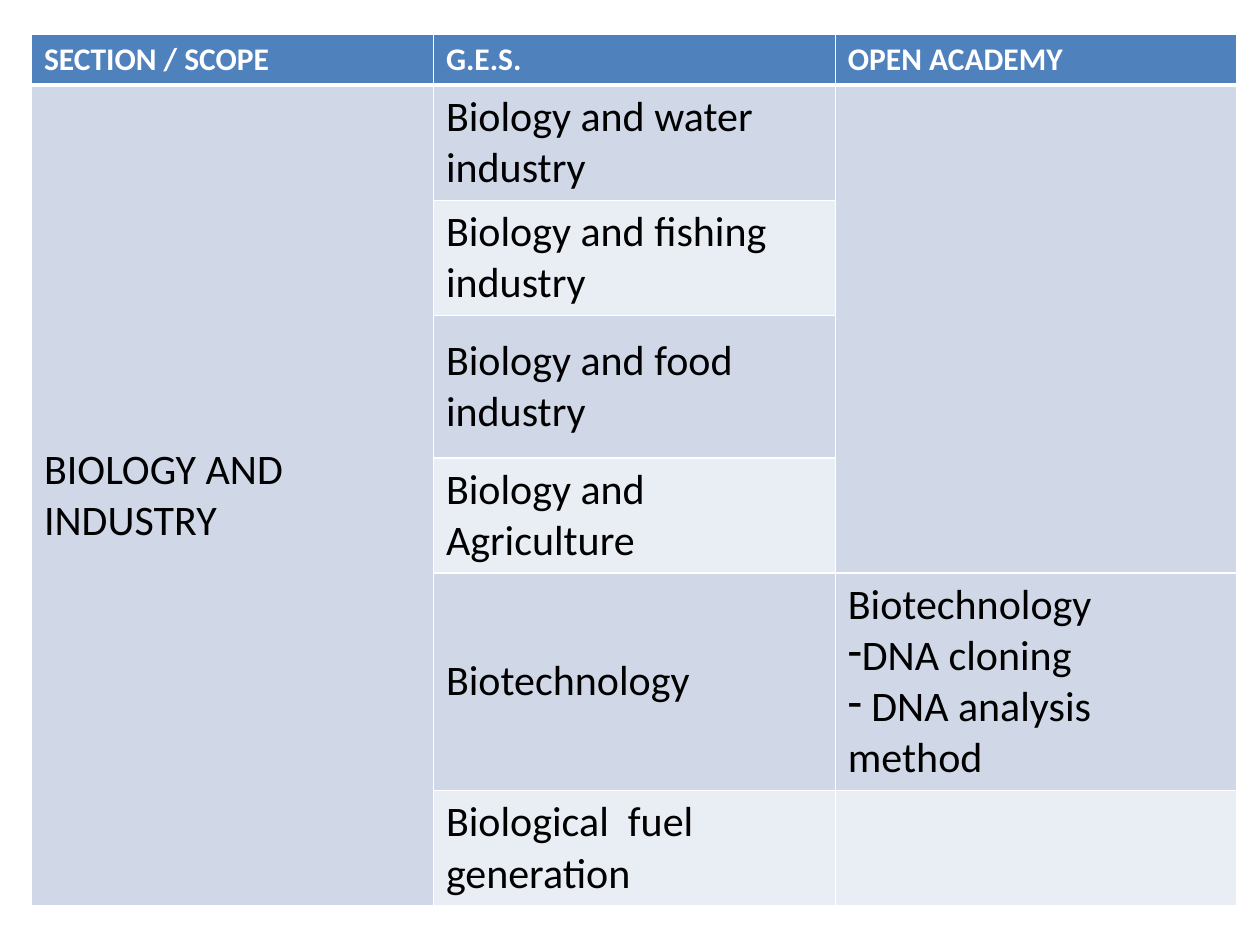
from dataclasses import dataclass

from lxml import etree
from pptx import Presentation
from pptx.dml.color import RGBColor
from pptx.enum.text import MSO_ANCHOR
from pptx.oxml.ns import qn
from pptx.util import Inches, Pt

TOP, MIDDLE = MSO_ANCHOR.TOP, MSO_ANCHOR.MIDDLE
WHITE = RGBColor(0xFF, 0xFF, 0xFF)
BLACK = RGBColor(0x00, 0x00, 0x00)
HEADER = RGBColor(0x4F, 0x81, 0xBD)
BAND_DARK = RGBColor(0xD0, 0xD8, 0xE8)
BAND_LIGHT = RGBColor(0xE9, 0xED, 0xF4)

WIDTH, HEIGHT = 10, 7.5
LEFT, TABLE_TOP = 0.25, 0.27
COL_WIDTH = 3.19
ROW_HEIGHTS = [0.38, 0.91, 0.91, 1.13, 0.91, 1.72, 0.91]
HEADER_FONT = {"name": "Calibri", "size": Pt(18), "bold": True}
BODY_FONT = {"name": "Calibri", "size": Pt(24), "bold": False}


@dataclass
class Entry:
    row: int
    col: int
    lines: tuple[str, ...] = ()
    rows: int = 1
    bullets_from: int = 99


HEADINGS = ("SECTION / SCOPE", "G.E.S.", "OPEN ACADEMY")
TOPICS = (
    "Biology and water industry",
    "Biology and fishing  industry",
    "Biology and food industry",
    "Biology and Agriculture",
    "Biotechnology",
    "Biological  fuel generation",
)
ENTRIES = [
    *(Entry(0, col, (text,)) for col, text in enumerate(HEADINGS)),
    Entry(1, 0, ("BIOLOGY AND INDUSTRY",), rows=6),
    *(Entry(row, 1, (text,)) for row, text in enumerate(TOPICS, 1)),
    Entry(1, 2, rows=4),
    Entry(5, 2, ("Biotechnology", "DNA cloning", " DNA analysis method"), bullets_from=1),
]


def add_border(cell, side: str, width: float) -> None:
    ln = etree.SubElement(cell._tc.get_or_add_tcPr(), qn(f"a:ln{side}"), w=str(Pt(width)))
    fill = etree.SubElement(ln, qn("a:solidFill"))
    etree.SubElement(fill, qn("a:srgbClr"), val=str(WHITE))


def style_cell(cell, row: int) -> None:
    widths = {"L": 1, "R": 1, "T": 3 if row == 1 else 1, "B": 3 if row == 0 else 1}
    for side, width in widths.items():
        add_border(cell, side, width)
    cell.fill.solid()
    band = BAND_DARK if row % 2 else BAND_LIGHT
    cell.fill.fore_color.rgb = HEADER if row == 0 else band
    cell.vertical_anchor = TOP if row == 0 else MIDDLE


def add_dash(p) -> None:
    pPr = p._p.get_or_add_pPr()
    pPr.set("marL", "0")
    pPr.set("indent", "0")
    etree.SubElement(pPr, qn("a:buFontTx"))
    etree.SubElement(pPr, qn("a:buChar"), char="-")


def fill_entry(table, entry: Entry) -> None:
    cell = table.cell(entry.row, entry.col)
    if entry.rows > 1:
        cell.merge(table.cell(entry.row + entry.rows - 1, entry.col))
    tf = cell.text_frame
    for i, line in enumerate(entry.lines):
        p = tf.add_paragraph() if i else tf.paragraphs[0]
        if i >= entry.bullets_from:
            add_dash(p)
        r = p.add_run()
        r.text = line
        for name, value in (BODY_FONT if entry.row else HEADER_FONT).items():
            setattr(r.font, name, value)
        r.font.color.rgb = BLACK if entry.row else WHITE


def main() -> None:
    prs = Presentation()
    prs.slide_width, prs.slide_height = Inches(WIDTH), Inches(HEIGHT)
    s = prs.slides.add_slide(prs.slide_layouts[6])
    size = Inches(COL_WIDTH * len(HEADINGS)), Inches(sum(ROW_HEIGHTS))
    table = s.shapes.add_table(
        len(ROW_HEIGHTS), len(HEADINGS), Inches(LEFT), Inches(TABLE_TOP), *size
    ).table
    for column in table.columns:
        column.width = Inches(COL_WIDTH)
    for i, height in enumerate(ROW_HEIGHTS):
        table.rows[i].height = Inches(height)
        for cell in table.rows[i].cells:
            style_cell(cell, i)
    for entry in ENTRIES:
        fill_entry(table, entry)
    prs.save("out.pptx")


if __name__ == "__main__":
    main()
